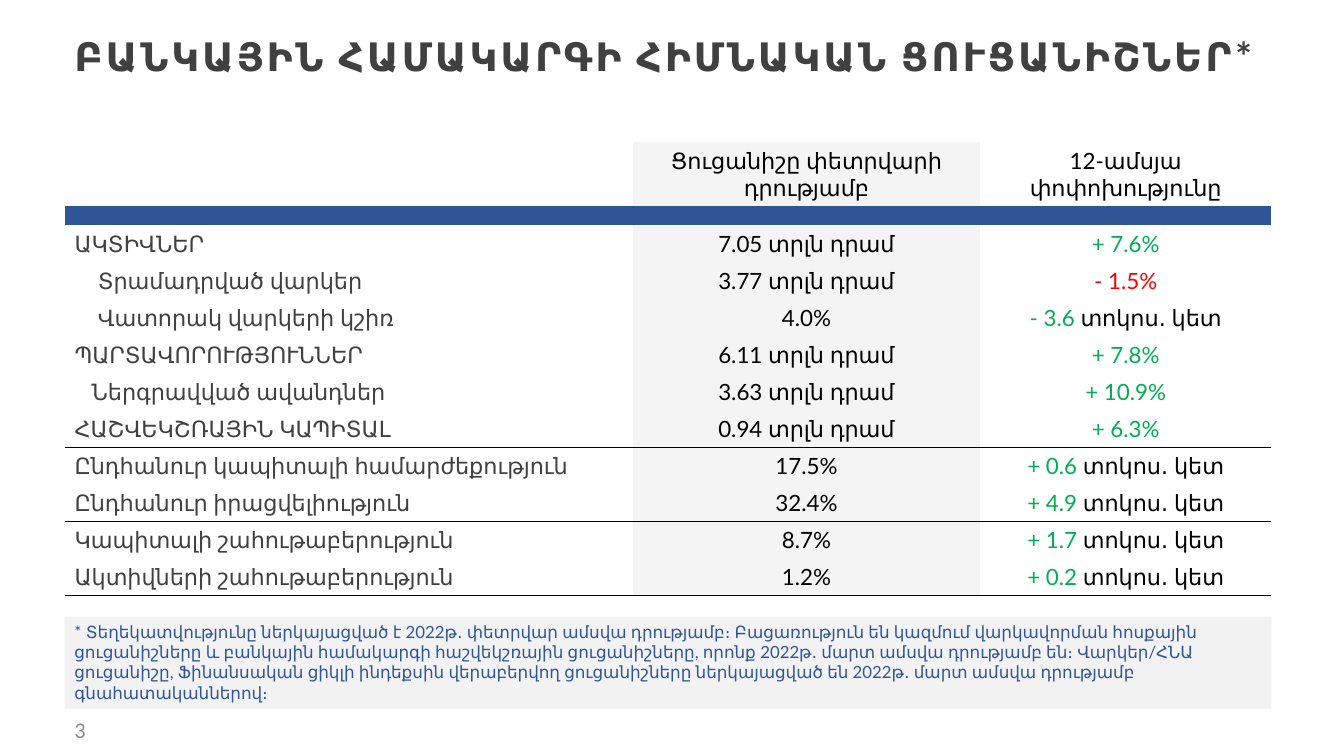
from dataclasses import dataclass

from lxml import etree
from pptx import Presentation
from pptx.dml.color import RGBColor
from pptx.enum.shapes import MSO_SHAPE
from pptx.enum.text import MSO_ANCHOR, PP_ALIGN
from pptx.oxml.ns import qn
from pptx.util import Emu, Inches, Pt

RECTANGLE = MSO_SHAPE.RECTANGLE
TOP, MIDDLE = MSO_ANCHOR.TOP, MSO_ANCHOR.MIDDLE
LEFT, CENTER = PP_ALIGN.LEFT, PP_ALIGN.CENTER

WHITE = RGBColor(0xFF, 0xFF, 0xFF)
BLACK = RGBColor(0x00, 0x00, 0x00)
DARK = RGBColor(0x40, 0x40, 0x40)
GREY = RGBColor(0x8C, 0x8C, 0x8C)
PALE = RGBColor(0xF2, 0xF2, 0xF2)
BLUE = RGBColor(0x2F, 0x55, 0x97)
GREEN = RGBColor(0x00, 0xB0, 0x50)
RED = RGBColor(0xFF, 0x00, 0x00)

PLAIN_STYLE = "{2D5ABB26-0587-4C30-8999-92F81FD0307C}"
SLIDE_W, SLIDE_H = Inches(13.33), Inches(7.5)
CELL_INSET = 0.1
POINTS = "տոկոս․ կետ"


@dataclass(frozen=True)
class Box:
    """A place on the slide, in percent of its width and height."""
    left: float
    top: float
    width: float
    height: float

    def emu(self) -> tuple[Emu, Emu, Emu, Emu]:
        return (across(self.left), down(self.top),
                across(self.width), down(self.height))


@dataclass(frozen=True)
class Indicator:
    label: str
    value: str
    change: str
    unit: str = ""
    indent: float = 0
    colour: RGBColor = GREEN
    ruled: bool = False


TITLE_BOX = Box(4.8, 1.87, 91.67, 10.93)
NUMBER_BOX = Box(4.8, 93.87, 6.45, 5.33)
TABLE_BOX = Box(4.8, 18.8, 89.8, 59.6)
NOTE_BOX = Box(4.8, 81.6, 89.8, 12.2)
COLUMN_SHARES = (47.1, 28.76, 24.14)
HEADER_H, BAR_H = 8.5, 2.5

TITLE = "ԲԱՆԿԱՅԻՆ ՀԱՄԱԿԱՐԳԻ ՀԻՄՆԱԿԱՆ ՑՈՒՑԱՆԻՇՆԵՐ*"
HEADERS = ("", "Ցուցանիշը փետրվարի դրությամբ", "12-ամսյա փոփոխությունը")
INDICATORS = (
    Indicator("ԱԿՏԻՎՆԵՐ", "7.05 տրլն դրամ", "+ 7.6%"),
    Indicator("Տրամադրված վարկեր", "3.77 տրլն դրամ", "- 1.5%", indent=0.23, colour=RED),
    Indicator("Վատորակ վարկերի կշիռ", "4.0%", "- 3.6 ", POINTS, indent=0.23),
    Indicator("ՊԱՐՏԱՎՈՐՈՒԹՅՈՒՆՆԵՐ", "6.11 տրլն դրամ", "+ 7.8%"),
    Indicator("Ներգրավված ավանդներ", "3.63 տրլն դրամ", "+ 10.9%", indent=0.17),
    Indicator("ՀԱՇՎԵԿՇՌԱՅԻՆ ԿԱՊԻՏԱԼ", "0.94 տրլն դրամ", "+ 6.3%", ruled=True),
    Indicator("Ընդհանուր կապիտալի համարժեքություն", "17.5%", "+ 0.6 ", POINTS),
    Indicator("Ընդհանուր իրացվելիություն", "32.4%", "+ 4.9 ", POINTS, ruled=True),
    Indicator("Կապիտալի շահութաբերություն", "8.7%", "+ 1.7 ", POINTS),
    Indicator("Ակտիվների շահութաբերություն", "1.2%", "+ 0.2 ", POINTS, ruled=True),
)
NOTE = (
    "* Տեղեկատվությունը ներկայացված է 2022թ․ փետրվար ամսվա դրությամբ։ "
    "Բացառություն են կազմում վարկավորման հոսքային ցուցանիշները և բանկային "
    "համակարգի հաշվեկշռային ցուցանիշները, որոնք 2022թ․ մարտ ամսվա դրությամբ են։ "
    "Վարկեր/ՀՆԱ ցուցանիշը, Ֆինանսական ցիկլի ինդեքսին վերաբերվող ցուցանիշները "
    "ներկայացված են 2022թ․ մարտ ամսվա դրությամբ գնահատականներով։"
)


def across(percent: float) -> Emu:
    return Emu(round(SLIDE_W * percent / 100))


def down(percent: float) -> Emu:
    return Emu(round(SLIDE_H * percent / 100))


def add_text(p, text: str, *, size: float = 16, colour: RGBColor = BLACK,
             font: str = "Lato", bold: bool = False, spacing: float = 0,
             align=LEFT) -> None:
    p.alignment = align
    r = p.add_run()
    r.text = text
    r.font.size, r.font.name, r.font.bold = Pt(size), font, bold
    r.font.color.rgb = colour
    if spacing:
        r.font._element.set("spc", str(round(spacing * 100)))


def add_text_box(slide, box: Box, text: str, **text_format) -> None:
    tf = slide.shapes.add_textbox(*box.emu()).text_frame
    tf.word_wrap = True
    tf.vertical_anchor = MIDDLE
    add_text(tf.paragraphs[0], text, **text_format)


def fill_cell(cell, colour: RGBColor, opacity: int = 100) -> None:
    cell.vertical_anchor = MIDDLE
    cell.fill.solid()
    cell.fill.fore_color.rgb = colour
    if opacity < 100:
        srgb = cell._tc.tcPr.find(f"{qn('a:solidFill')}/{qn('a:srgbClr')}")
        etree.SubElement(srgb, qn("a:alpha"), val=str(opacity * 1000))


def rule_below(cell) -> None:
    ln = etree.Element(qn("a:lnB"), w=str(Pt(1)))
    fill = etree.SubElement(ln, qn("a:solidFill"))
    etree.SubElement(fill, qn("a:srgbClr"), val=str(BLACK))
    cell._tc.tcPr.insert(0, ln)


def fill_row(cells) -> None:
    """Shade the middle column of a row."""
    for cell, colour, opacity in zip(cells, (WHITE, PALE, WHITE), (100, 80, 100)):
        fill_cell(cell, colour, opacity)


def draw_header(cells) -> None:
    fill_row(cells)
    for cell, text in zip(cells, HEADERS):
        if text:
            add_text(cell.text_frame.paragraphs[0], text, align=CENTER)


def draw_bar(cells) -> None:
    for cell in cells:
        fill_cell(cell, BLUE)
        cell.margin_top = cell.margin_bottom = 0
        p = cell.text_frame.paragraphs[0]
        etree.SubElement(p._p, qn("a:endParaRPr"), sz="400")


def draw_indicator(cells, item: Indicator) -> None:
    fill_row(cells)
    label, value, change = (cell.text_frame.paragraphs[0] for cell in cells)
    cells[0].margin_left = Inches(CELL_INSET + item.indent)
    add_text(label, item.label, colour=DARK)
    add_text(value, item.value, align=CENTER)
    add_text(change, item.change, colour=item.colour, align=CENTER)
    if item.unit:
        add_text(change, item.unit, align=CENTER)
    if item.ruled:
        for cell in cells:
            rule_below(cell)


def add_indicator_table(slide) -> None:
    frame = slide.shapes.add_table(len(INDICATORS) + 2, len(HEADERS), *TABLE_BOX.emu())
    table = frame.table
    table.first_row = table.horz_banding = False
    table._tbl.tblPr.find(qn("a:tableStyleId")).text = PLAIN_STYLE
    for column, share in zip(table.columns, COLUMN_SHARES):
        column.width = across(TABLE_BOX.width * share / 100)
    body_h = (TABLE_BOX.height - HEADER_H - BAR_H) / len(INDICATORS)
    for row, height in zip(table.rows, (HEADER_H, BAR_H, *[body_h] * len(INDICATORS))):
        row.height = down(height)
    header, bar, *body = (list(row.cells) for row in table.rows)
    draw_header(header)
    draw_bar(bar)
    for cells, item in zip(body, INDICATORS):
        draw_indicator(cells, item)


def add_note(slide) -> None:
    sp = slide.shapes.add_shape(RECTANGLE, *NOTE_BOX.emu())
    sp.shadow.inherit = False
    sp.fill.solid()
    sp.fill.fore_color.rgb = PALE
    sp.line.fill.background()
    tf = sp.text_frame
    tf.word_wrap = True
    tf.vertical_anchor = TOP
    add_text(tf.paragraphs[0], NOTE, size=12, colour=BLUE)


def main() -> None:
    prs = Presentation()
    prs.slide_width, prs.slide_height = SLIDE_W, SLIDE_H
    slide = prs.slides.add_slide(prs.slide_layouts[6])
    add_text_box(slide, TITLE_BOX, TITLE, size=28, colour=DARK, bold=True, spacing=2)
    add_text_box(slide, NUMBER_BOX, "3", colour=GREY, font="Calibri")
    add_indicator_table(slide)
    add_note(slide)
    prs.save("out.pptx")


if __name__ == "__main__":
    main()
